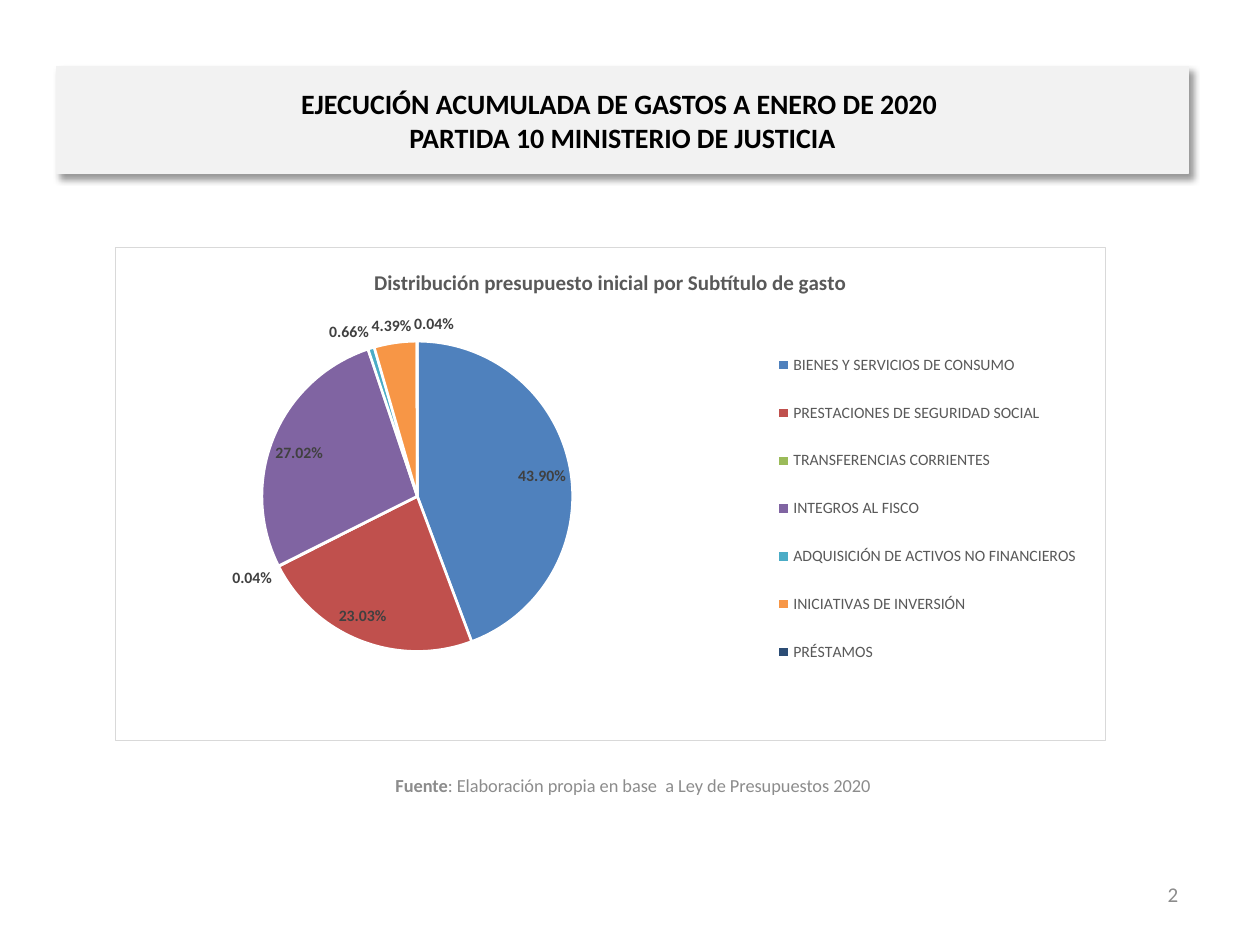
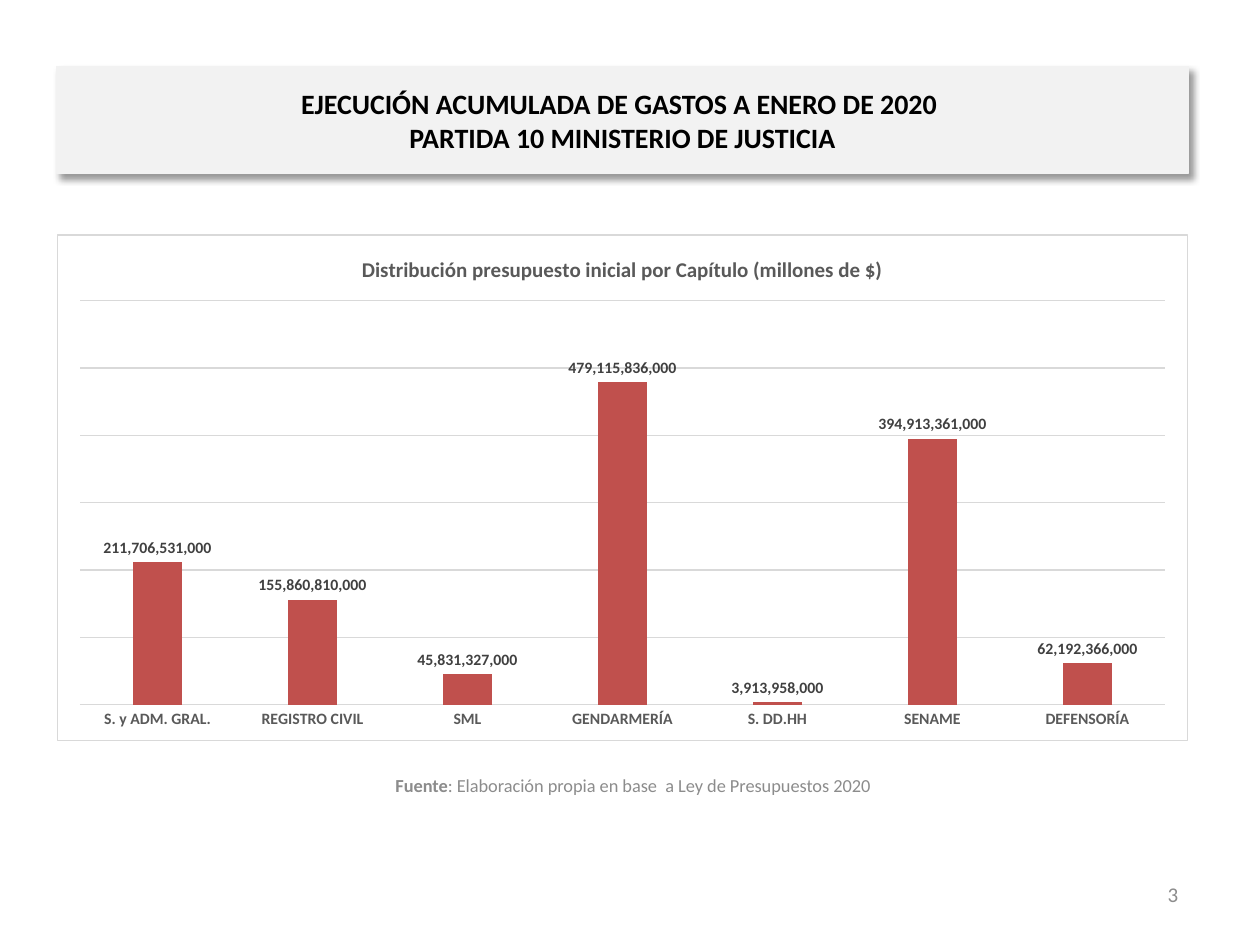
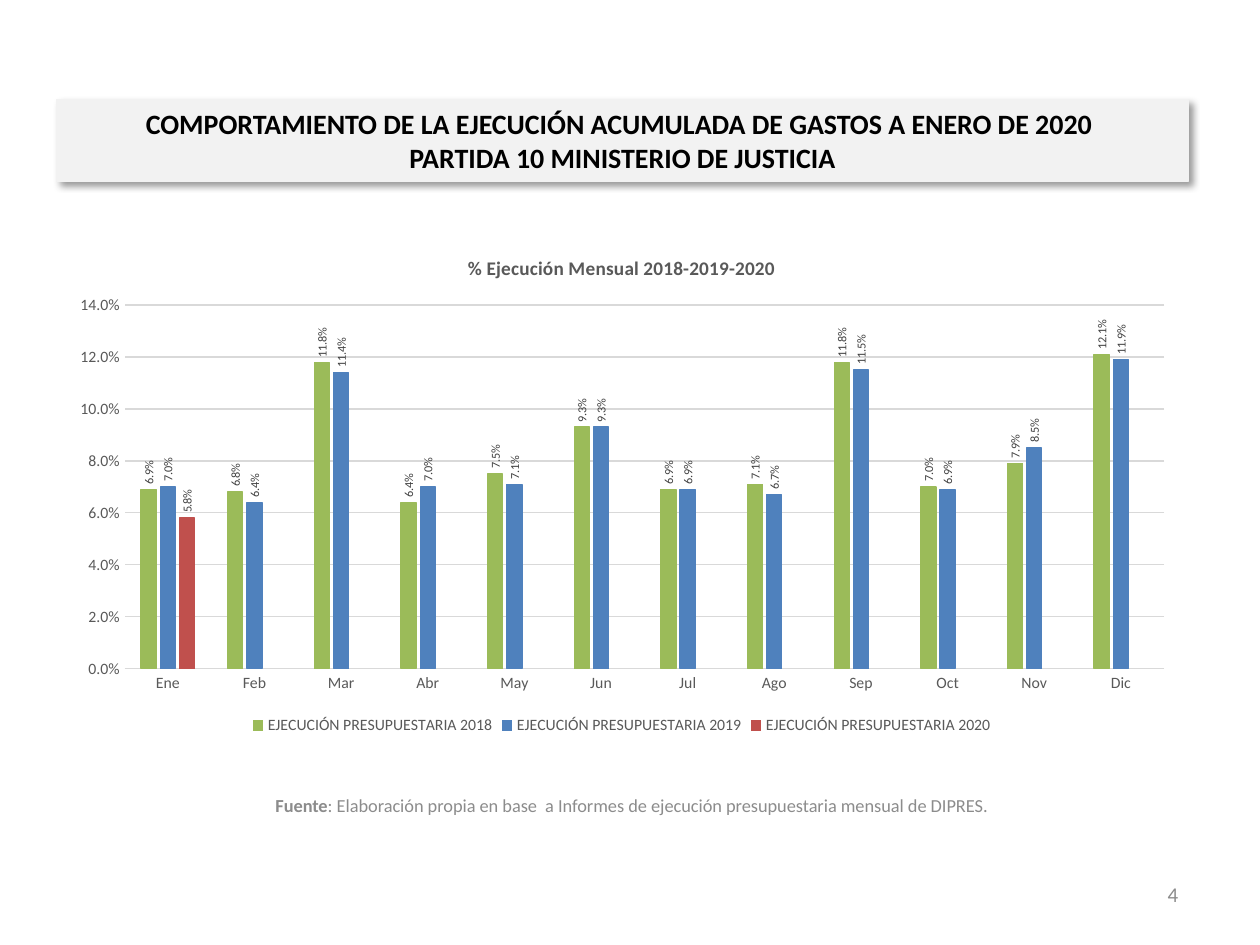
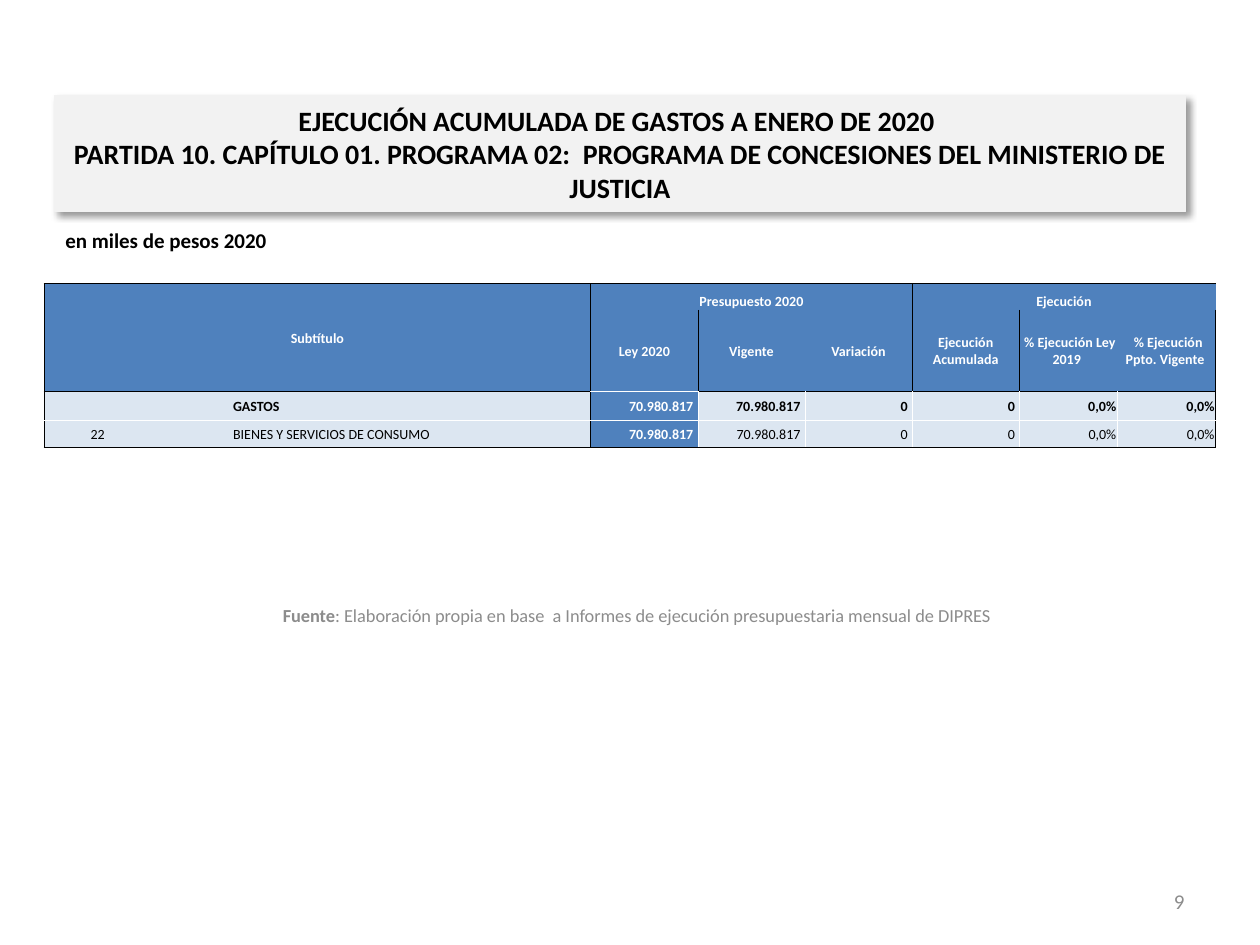
from dataclasses import dataclass

import pptx
import pptx.chart.data
import pptx.dml.color
import pptx.enum.chart
import pptx.enum.text
import pptx.oxml
import pptx.oxml.ns
import pptx.util

RGB = pptx.dml.color.RGBColor.from_string
Pt = pptx.util.Pt
ALIGN = pptx.enum.text.PP_ALIGN
ANCHOR = pptx.enum.text.MSO_ANCHOR
CHART = pptx.enum.chart.XL_CHART_TYPE
qn = pptx.oxml.ns.qn
NAMESPACES = pptx.oxml.ns.nsdecls("a", "c")


@dataclass(frozen=True)
class Theme:
    font: str = "Calibri"
    black: str = "000000"
    white: str = "FFFFFF"
    band: str = "F2F2F2"
    muted: str = "8C8C8C"
    axis_text: str = "595959"
    label_text: str = "404040"
    rule: str = "D9D9D9"
    blue: str = "4F81BD"
    red: str = "C0504D"
    green: str = "9BBB59"
    pale_blue: str = "DCE6F1"
    pie: tuple = ("4F81BD", "C0504D", "9BBB59", "8064A2", "4BACC6", "F79646", "2C4D75")
    title_size: float = 16
    body_size: float = 12
    source_size: float = 10.5
    chart_size: float = 9
    table_size: float = 8


theme = Theme()
presentation = pptx.Presentation()
presentation.slide_width = pptx.util.Inches(10)
presentation.slide_height = pptx.util.Inches(7.5)
# The slide is a grid of 100 columns by 75 rows
cell_size = presentation.slide_width / 100


def grid(*lengths):
    return [round(length * cell_size) for length in lengths]


def set_font(font, size, color, bold=False):
    font.name, font.size, font.bold = theme.font, Pt(size), bold
    font.color.rgb = RGB(color)


# Shared frame: title band, source line and page number
EXECUTION = "EJECUCIÓN ACUMULADA DE GASTOS A ENERO DE 2020 \v"
MINISTRY = "PARTIDA 10 MINISTERIO DE JUSTICIA"
BUDGET_LAW = ": Elaboración propia en base  a Ley de Presupuestos 2020"
REPORTS = ": Elaboración propia en base  a Informes de ejecución presupuestaria mensual de DIPRES"
frames = [
    # title, band area, source, source left and top, page, page left and top
    (EXECUTION + MINISTRY, (4.5, 5.3, 89.8, 8.5), BUDGET_LAW, (4.3, 60.3), "2", (71.2, 69)),
    (EXECUTION + MINISTRY, (4.5, 5.3, 89.8, 8.5), BUDGET_LAW, (4.3, 60.3), "3", (71.2, 69)),
    ("COMPORTAMIENTO DE LA " + EXECUTION + MINISTRY, (4.5, 7.9, 89.8, 6.5),
     REPORTS + ".", (4.2, 61.9), "4", (71.2, 69)),
    (EXECUTION + "PARTIDA 10. CAPÍTULO 01. PROGRAMA 02:  PROGRAMA DE CONCESIONES "
     "DEL MINISTERIO DE JUSTICIA", (4.3, 7.6, 89.8, 9.2), REPORTS, (4.6, 46.8), "9", (71.7, 69.5)),
]
for title, band_area, source, source_corner, page, page_corner in frames:
    slide = presentation.slides.add_slide(presentation.slide_layouts[5])
    band = slide.shapes.title
    band.left, band.top, band.width, band.height = grid(*band_area)
    band.fill.solid()
    band.fill.fore_color.rgb = RGB(theme.band)
    band.line.color.rgb = RGB(theme.band)
    band.line.width = Pt(0.75)
    band._element.spPr.append(pptx.oxml.parse_xml(
        f'<a:effectLst {NAMESPACES}><a:outerShdw blurRad="50800" dist="38100" dir="2700000" '
        f'algn="tl" rotWithShape="0"><a:srgbClr val="{theme.black}"><a:alpha val="40000"/>'
        '</a:srgbClr></a:outerShdw></a:effectLst>'))
    frame = band.text_frame
    frame.auto_size = pptx.enum.text.MSO_AUTO_SIZE.NONE
    frame.word_wrap = True
    frame.vertical_anchor = ANCHOR.MIDDLE
    paragraph = frame.paragraphs[0]
    paragraph.text = title
    paragraph.alignment = ALIGN.CENTER
    set_font(paragraph.font, theme.title_size, theme.black, True)

    source_box = slide.shapes.add_textbox(*grid(*source_corner, 91.9, 4))
    page_box = slide.shapes.add_textbox(*grid(*page_corner, 23.3, 4))
    for box in (source_box, page_box):
        box.text_frame.word_wrap = True
        box.text_frame.vertical_anchor = ANCHOR.MIDDLE
    paragraph = source_box.text_frame.paragraphs[0]
    paragraph.alignment = ALIGN.CENTER
    for text, bold in (("Fuente", True), (source, False)):
        run = paragraph.add_run()
        run.text = text
        set_font(run.font, theme.source_size, theme.muted, bold)
    paragraph = page_box.text_frame.paragraphs[0]
    paragraph.text = page
    paragraph.alignment = ALIGN.RIGHT
    set_font(paragraph.font, theme.body_size, theme.muted)

# Charts on the first three slides
chart_specs = [
    dict(kind=CHART.PIE, area=(9.1, 19.6, 78.7, 39.2), format="0.00%", border=True,
         title="Distribución presupuesto inicial por Subtítulo de gasto", title_size=12,
         plot=(0.06, 0.19, 0.49, 0.63), label_size=9,
         categories=["BIENES Y SERVICIOS DE CONSUMO", "PRESTACIONES DE SEGURIDAD SOCIAL",
                     "TRANSFERENCIAS CORRIENTES", "INTEGROS AL FISCO",
                     "ADQUISICIÓN DE ACTIVOS NO FINANCIEROS", "INICIATIVAS DE INVERSIÓN",
                     "PRÉSTAMOS"],
         series=[("Series 1", None, [0.439, 0.2303, 0.0004, 0.2702, 0.0066, 0.0439, 0.0004])]),
    dict(kind=CHART.COLUMN_CLUSTERED, area=(4.5, 18.6, 89.8, 40.2), format="#,##0", border=True,
         title="Distribución presupuesto inicial por Capítulo (millones de $)", title_size=12,
         plot=(0.02, 0.13, 0.96, 0.8), label_size=9, top=600_000_000_000, step=100_000_000_000,
         categories=["S. y ADM. GRAL.", "REGISTRO CIVIL", "SML", "GENDARMERÍA", "S. DD.HH",
                     "SENAME", "DEFENSORÍA"],
         series=[("Series 1", theme.red,
                  [211706531000, 155860810000, 45831327000, 479115836000, 3913958000,
                   394913361000, 62192366000])]),
    dict(kind=CHART.COLUMN_CLUSTERED, area=(4.5, 18.6, 89.7, 40.1), format="0.0%", border=False,
         title="% Ejecución Mensual 2018-2019-2020", title_size=11,
         plot=(0.06, 0.14, 0.92, 0.72), label_size=7, top=0.14, step=0.02,
         categories="Ene Feb Mar Abr May Jun Jul Ago Sep Oct Nov Dic".split(),
         series=[("EJECUCIÓN PRESUPUESTARIA 2018", theme.green,
                  [0.069, 0.068, 0.118, 0.064, 0.075, 0.093,
                   0.069, 0.071, 0.118, 0.07, 0.079, 0.121]),
                 ("EJECUCIÓN PRESUPUESTARIA 2019", theme.blue,
                  [0.07, 0.064, 0.114, 0.07, 0.071, 0.093,
                   0.069, 0.067, 0.115, 0.069, 0.085, 0.119]),
                 ("EJECUCIÓN PRESUPUESTARIA 2020", theme.red, [0.058] + [None] * 11)]),
]
LAYOUT = ('<c:layout {}><c:manualLayout>{}<c:xMode val="edge"/><c:yMode val="edge"/>'
          '<c:x val="{}"/><c:y val="{}"/><c:w val="{}"/><c:h val="{}"/></c:manualLayout></c:layout>')
LEGEND_AREA = (0.66, 0.16, 0.32, 0.74)

for slide, spec in zip(presentation.slides, chart_specs):
    is_pie = spec["kind"] == CHART.PIE
    chart_data = pptx.chart.data.CategoryChartData(number_format=spec["format"])
    chart_data.categories = spec["categories"]
    for name, color, values in spec["series"]:
        chart_data.add_series(name, values)
    chart = slide.shapes.add_chart(spec["kind"], *grid(*spec["area"]), chart_data).chart
    set_font(chart.font, 10, theme.black)
    chart.has_title = True
    paragraph = chart.chart_title.text_frame.paragraphs[0]
    paragraph.text = spec["title"]
    set_font(paragraph.font, spec["title_size"], theme.axis_text, True)

    # Chart background, border and plot area
    if spec["border"]:
        outline = (f'<a:solidFill><a:srgbClr val="{theme.white}"/></a:solidFill><a:ln w="9525">'
                   f'<a:solidFill><a:srgbClr val="{theme.rule}"/></a:solidFill></a:ln>')
    else:
        outline = "<a:noFill/><a:ln><a:noFill/></a:ln>"
    chart_element = chart._chartSpace.find(qn("c:chart"))
    chart_element.addnext(pptx.oxml.parse_xml(f"<c:spPr {NAMESPACES}>{outline}</c:spPr>"))
    plot_area = chart_element.find(qn("c:plotArea"))
    for automatic in plot_area.findall(qn("c:layout")):
        plot_area.remove(automatic)
    plot_area.insert(0, pptx.oxml.parse_xml(
        LAYOUT.format(NAMESPACES, '<c:layoutTarget val="inner"/>', *spec["plot"])))

    # Legend
    chart.has_legend = is_pie or len(spec["series"]) > 1
    if chart.has_legend:
        legend = chart.legend
        positions = pptx.enum.chart.XL_LEGEND_POSITION
        legend.position = positions.RIGHT if is_pie else positions.BOTTOM
        legend.include_in_layout = False
        set_font(legend.font, theme.chart_size, theme.axis_text)
        if is_pie:
            for automatic in legend._element.findall(qn("c:layout")):
                legend._element.remove(automatic)
            legend._element.find(qn("c:legendPos")).addnext(pptx.oxml.parse_xml(
                LAYOUT.format(NAMESPACES, "", *LEGEND_AREA)))

    # Series colours and data labels
    plot = chart.plots[0]
    plot.vary_by_categories = is_pie
    label_positions = pptx.enum.chart.XL_LABEL_POSITION
    for series, (name, color, values) in zip(plot.series, spec["series"]):
        if is_pie:
            for index, slice_color in enumerate(theme.pie):
                slice_format = series.points[index].format
                slice_format.fill.solid()
                slice_format.fill.fore_color.rgb = RGB(slice_color)
                slice_format.line.color.rgb = RGB(theme.white)
                slice_format.line.width = Pt(1.5)
        else:
            series.invert_if_negative = False
            series.format.fill.solid()
            series.format.fill.fore_color.rgb = RGB(color)
            if len(spec["series"]) > 1:
                series.format.line.color.rgb = RGB(color)
                series.format.line.width = Pt(0.75)
        labels = series.data_labels
        labels.show_value = True
        labels.number_format = spec["format"]
        labels.number_format_is_linked = False
        labels.position = label_positions.BEST_FIT if is_pie else label_positions.OUTSIDE_END
        set_font(labels.font, spec["label_size"], theme.label_text, spec["border"])
        if len(spec["series"]) > 1:
            label_body = labels._element.find(qn("c:txPr")).find(qn("a:bodyPr"))
            label_body.set("rot", "-5400000")
            label_body.set("vert", "horz")
    if is_pie:
        continue

    # Column spacing and axes
    plot.gap_width, plot.overlap = 219, -27
    category_axis, value_axis = chart.category_axis, chart.value_axis
    for axis in (category_axis, value_axis):
        axis.major_tick_mark = axis.minor_tick_mark = pptx.enum.chart.XL_TICK_MARK.NONE
        set_font(axis.tick_labels.font, theme.chart_size, theme.axis_text)
    category_axis.tick_labels.font.bold = spec["border"]
    value_axis.minimum_scale, value_axis.maximum_scale = 0, spec["top"]
    value_axis.major_unit = spec["step"]
    value_axis.has_major_gridlines = True
    for line in (category_axis.format.line, value_axis.major_gridlines.format.line):
        line.color.rgb = RGB(theme.rule)
        line.width = Pt(0.75)
    value_axis.format.line.fill.background()
    value_axis.tick_labels.number_format = spec["format"]
    value_axis.tick_labels.number_format_is_linked = False
    value_axis.visible = len(spec["series"]) > 1

# Budget table on the last slide
slide = presentation.slides[3]
unit_box = slide.shapes.add_textbox(*grid(4.2, 17.6, 90, 3.4))
unit_box.text_frame.word_wrap = True
paragraph = unit_box.text_frame.paragraphs[0]
paragraph.text = "en miles de pesos 2020"
set_font(paragraph.font, theme.body_size, theme.black, True)

rows = [
    ["Subtítulo", "", "", "", "Presupuesto 2020", "", "", "Ejecución", "", ""],
    ["", "", "", "", "Ley 2020", "Vigente", "Variación", "Ejecución Acumulada",
     " % Ejecución Ley 2019 ", " % Ejecución Ppto. Vigente "],
    ["", "", "", "GASTOS", "70.980.817 ", "70.980.817 ", "0 ", "0 ", "0,0%", "0,0%"],
    ["22", "", "", "BIENES Y SERVICIOS DE CONSUMO", "70.980.817 ", "70.980.817 ", "0 ", "0 ",
     "0,0%", "0,0%"],
]
column_widths = [8.5, 3.2, 3.2, 28.5, 8.5, 8.5, 8.5, 8.5, 7.8, 7.8]
row_heights = [2.1, 6.5, 2.3, 2.1]
table = slide.shapes.add_table(4, 10, *grid(3.5, 22.5, 93, 13)).table
table._tbl.tblPr.find(qn("a:tableStyleId")).text = "{2D5ABB26-0587-4C30-8999-92F81FD0307C}"
for column, width in zip(table.columns, grid(*column_widths)):
    column.width = width
for table_row, height in zip(table.rows, grid(*row_heights)):
    table_row.height = height
for first, last in (((0, 0), (1, 3)), ((0, 4), (0, 6)), ((0, 7), (0, 9))):
    table.cell(*first).merge(table.cell(*last))

LAW = 4  # column of the highlighted budget
for r, texts in enumerate(rows):
    for c, text in enumerate(texts):
        cell = table.cell(r, c)
        header = r < 2
        dark = header or c == LAW
        cell.fill.solid()
        cell.fill.fore_color.rgb = RGB(theme.blue if dark else theme.pale_blue)
        cell.margin_left = cell.margin_right = cell.margin_top = pptx.util.Inches(0.01)
        cell.margin_bottom = 0
        cell.vertical_anchor = ANCHOR.BOTTOM if r == 0 and c >= LAW else ANCHOR.MIDDLE
        paragraph = cell.text_frame.paragraphs[0]
        if text:
            paragraph.text = text
            paragraph.alignment = (ALIGN.CENTER if header or c == 0 else
                                   ALIGN.JUSTIFY if c < LAW else ALIGN.RIGHT)
            set_font(paragraph.font, theme.table_size, theme.white if dark else theme.black,
                     dark or r == 2)
        else:
            paragraph._p.get_or_add_endParaRPr().set("sz", str(theme.table_size * 100))

        # Black frames around the column groups, white rules inside the body
        inner = None if header else theme.white
        left = theme.black if c in (0, LAW) or header and c == 7 else inner if c > LAW else None
        right = theme.black if c in (3, 9) or header and c == 6 else inner if c > 3 else None
        under_header = theme.white if c == LAW else theme.black
        top = [theme.black, None, under_header, theme.white][r]
        bottom = [None, under_header, theme.white, theme.black][r]
        sides = [(side, color) for side, color in zip("LRTB", (left, right, top, bottom)) if color]
        properties = cell._tc.get_or_add_tcPr()
        for index, (side, color) in enumerate(sides):
            properties.insert(index, pptx.oxml.parse_xml(
                f'<a:ln{side} {NAMESPACES} w="6350"><a:solidFill><a:srgbClr val="{color}"/>'
                f'</a:solidFill></a:ln{side}>'))

presentation.save("out.pptx")
